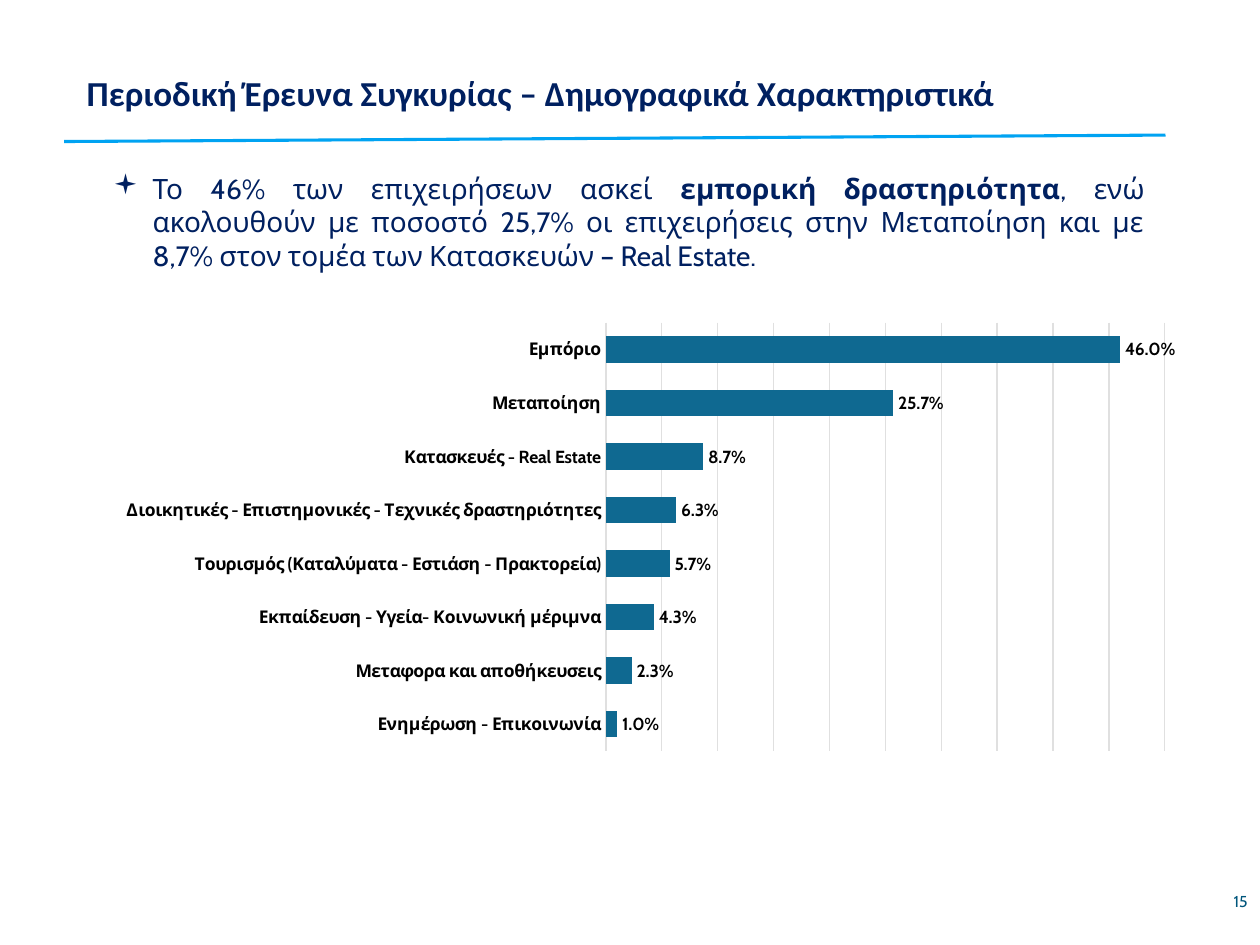
from dataclasses import dataclass

from lxml import etree
from pptx import Presentation
from pptx.chart.data import CategoryChartData
from pptx.dml.color import RGBColor
from pptx.enum.chart import XL_CHART_TYPE, XL_LABEL_POSITION, XL_TICK_LABEL_POSITION, XL_TICK_MARK
from pptx.enum.shapes import MSO_CONNECTOR
from pptx.enum.text import MSO_ANCHOR, PP_ALIGN
from pptx.oxml import parse_xml
from pptx.oxml.ns import nsdecls, qn
from pptx.util import Pt

BAR_CLUSTERED = XL_CHART_TYPE.BAR_CLUSTERED
OUTSIDE_END = XL_LABEL_POSITION.OUTSIDE_END
NO_LABELS = XL_TICK_LABEL_POSITION.NONE
NO_TICKS = XL_TICK_MARK.NONE
STRAIGHT = MSO_CONNECTOR.STRAIGHT
TOP, MIDDLE = MSO_ANCHOR.TOP, MSO_ANCHOR.MIDDLE
LEFT, RIGHT, JUSTIFY = PP_ALIGN.LEFT, PP_ALIGN.RIGHT, PP_ALIGN.JUSTIFY


@dataclass(frozen=True)
class Theme:
    navy = RGBColor(0x00, 0x20, 0x60)
    teal = RGBColor(0x00, 0x56, 0x7C)
    rule = RGBColor(0x00, 0xA3, 0xF2)
    bar = RGBColor(0x0F, 0x69, 0x91)
    grid = RGBColor(0xE0, 0xE0, 0xE0)
    black = RGBColor(0, 0, 0)
    heading_font = "Calibri"
    body_font = "Cabin"
    title_size = Pt(20)
    body_size = Pt(16)
    chart_size = Pt(10)
    number_size = Pt(9)


theme = Theme()


def set_font(font, name, size, color, bold=None):
    font.name, font.size, font.bold = name, size, bold
    font.color.rgb = color


def add_text_box(left, top, width, height, align=LEFT, anchor=TOP):
    box = page.shapes.add_textbox(Pt(left), Pt(top), Pt(width), Pt(height))
    box.text_frame.word_wrap = True
    box.text_frame.vertical_anchor = anchor
    para = box.text_frame.paragraphs[0]
    para.alignment = align
    return para


deck = Presentation()
deck.slide_width, deck.slide_height = Pt(720), Pt(540)
page = deck.slides.add_slide(deck.slide_layouts[6])

# Rule under the title
rule = page.shapes.add_connector(STRAIGHT, Pt(36.7), Pt(80.9), Pt(666), Pt(77.2))
rule.line.color.rgb = theme.rule
rule.line.width = Pt(1.75)
etree.SubElement(rule._element.spPr, qn("a:effectLst"))

# Page number
para = add_text_box(558, 500.4, 162, 28.8, RIGHT, MIDDLE)
para.text = "15"
set_font(para.font, theme.body_font, theme.number_size, theme.teal)

# Title
para = add_text_box(42.5, 37.4, 544.3, 31.7)
para.text = "Περιοδική Έρευνα Συγκυρίας – Δημογραφικά Χαρακτηριστικά"
set_font(para.font, theme.heading_font, theme.title_size, theme.navy, True)

# Key finding
para = add_text_box(57.6, 94.3, 603.4, 65.5, JUSTIFY)
properties = para._p.get_or_add_pPr()
properties.set("marL", str(Pt(22.5)))
properties.set("indent", str(Pt(-22.5)))
etree.SubElement(properties, qn("a:buFont")).set("typeface", "Wingdings")
etree.SubElement(properties, qn("a:buChar")).set("char", "▪")
set_font(para.font, theme.body_font, theme.body_size, theme.navy)
for text, bold in (
    ("Το 46% των επιχειρήσεων ασκεί ", False),
    ("εμπορική δραστηριότητα", True),
    (", ενώ ακολουθούν με ποσοστό 25,7% οι επιχειρήσεις στην Μεταποίηση "
     "και με 8,7% στον τομέα των Κατασκευών – Real Estate.", False),
):
    span = para.add_run()
    span.text = text
    span.font.bold = bold

# Sector shares, listed from the bottom bar to the top bar
sector_shares = {
    "Ενημέρωση - Επικοινωνία": 0.01,
    "Μεταφορα και αποθήκευσεις": 0.023,
    "Εκπαίδευση - Υγεία- Κοινωνική μέριμνα": 0.043,
    "Τουρισμός (Καταλύματα - Εστιάση - Πρακτορεία)": 0.057,
    "Διοικητικές - Επιστημονικές - Τεχνικές δραστηριότητες": 0.063,
    "Κατασκευές - Real Estate": 0.087,
    "Μεταποίηση": 0.257,
    "Εμπόριο": 0.46,
}
data = CategoryChartData(number_format="0.0%")
data.categories = list(sector_shares)
data.add_series("Series 1", list(sector_shares.values()))
chart = page.shapes.add_chart(
    BAR_CLUSTERED, Pt(57.6), Pt(179.3), Pt(614.2), Pt(254.9), data).chart
chart.has_legend = False
chart.has_title = False
set_font(chart.font, theme.body_font, theme.chart_size, theme.black)

# Bars and their labels
plot = chart.plots[0]
plot.gap_width = 100
plot.vary_by_categories = False
bars = plot.series[0]
bars.format.fill.solid()
bars.format.fill.fore_color.rgb = theme.bar
labels = bars.data_labels
labels.show_value = True
labels.number_format, labels.number_format_is_linked = "0.0%", False
labels.position = OUTSIDE_END
set_font(labels.font, theme.body_font, theme.chart_size, theme.black, True)

# Axes
sectors, shares = chart.category_axis, chart.value_axis
set_font(sectors.tick_labels.font, theme.body_font, theme.chart_size, theme.black, True)
sectors.major_tick_mark = NO_TICKS
shares.major_tick_mark = NO_TICKS
shares.tick_label_position = NO_LABELS
shares.minimum_scale, shares.maximum_scale, shares.major_unit = 0, 0.5, 0.05
shares.has_major_gridlines = True
shares.format.line.fill.background()
for line in (sectors.format.line, shares.major_gridlines.format.line):
    line.color.rgb = theme.grid
    line.width = Pt(0.75)

# Fixed plot area, as fractions of the chart
fractions = {"x": 0.47, "y": 0.02, "w": 0.52, "h": 0.96}
edges = "".join(f'<c:{side}Mode val="edge"/>' for side in "xy")
sizes = "".join(f'<c:{side} val="{value}"/>' for side, value in fractions.items())
layout = parse_xml(
    f'<c:layout {nsdecls("c")}><c:manualLayout><c:layoutTarget val="inner"/>'
    f"{edges}{sizes}</c:manualLayout></c:layout>")
plot_area = chart._chartSpace.chart.plotArea
for old_layout in plot_area.findall(qn("c:layout")):
    plot_area.remove(old_layout)
plot_area.insert(0, layout)

deck.save("out.pptx")
